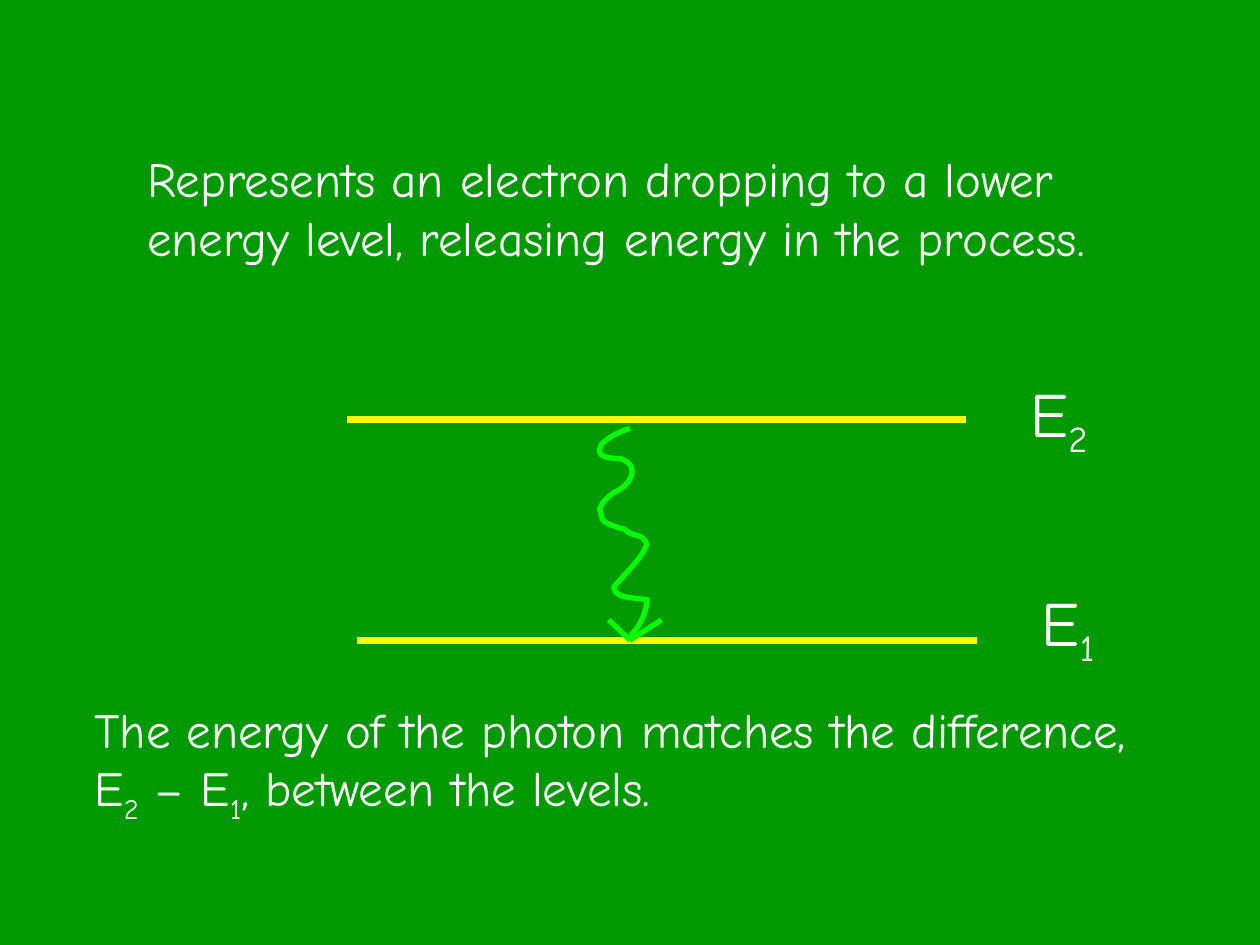
from typing import NamedTuple

from lxml.etree import SubElement
from pptx import Presentation
from pptx.dml.color import RGBColor
from pptx.enum.shapes import MSO_CONNECTOR
from pptx.enum.text import MSO_AUTO_SIZE
from pptx.oxml.ns import qn
from pptx.slide import Slide
from pptx.util import Inches, Pt

FONT = "Comic Neue"
GREEN, WHITE, YELLOW, LIME = "009900", "FFFFFF", "FFFF00", "00FF00"
CURVE_STEPS = 8

Point = tuple[float, float]


class Line(NamedTuple):
    start: Point
    end: Point
    color: str
    width: float


class Text(NamedTuple):
    """Text box; its runs alternate between normal and subscript."""
    left: float
    top: float
    width: float
    height: float
    size: int
    wrap: bool
    runs: tuple[str, ...]


ARROW_TIP = (5, 5.08)
LINES = [
    Line((2.83, 5.08), (7.75, 5.08), YELLOW, 4),
    Line((2.75, 3.33), (7.67, 3.33), YELLOW, 4),
    Line(ARROW_TIP, (4.83, 4.92), LIME, 3),
    Line(ARROW_TIP, (5.25, 4.92), LIME, 3),
]
TEXTS = [
    Text(8.17, 4.58, 0.66, 0.7, 36, False, ("E", "1")),
    Text(8.08, 2.92, 0.72, 0.7, 36, False, ("E", "2")),
    Text(1.07, 1.13, 8.18, 1.5, 28, True,
         ("Represents an electron dropping to a lower energy level, "
          "releasing energy in the process.",)),
    Text(0.65, 5.5, 8.77, 1.03, 28, True,
         ("The energy of the photon matches the difference, E", "2",
          " – E", "1", ", between the levels.")),
]
PHOTON_START = (5, 3.4)
# Each Bézier curve: two control points and an end point.
PHOTON_CURVES = [
    ((4.91, 3.43), (4.84, 3.46), (4.77, 3.53)),
    ((4.77, 3.55), (4.75, 3.57), (4.76, 3.59)),
    ((4.77, 3.64), (4.91, 3.64), (4.93, 3.64)),
    ((5.1, 3.7), (4.99, 3.87), (4.87, 3.91)),
    ((4.82, 3.95), (4.78, 3.98), (4.76, 4.04)),
    ((4.78, 4.11), (4.77, 4.13), (4.83, 4.16)),
    ((4.86, 4.17), (4.89, 4.18), (4.91, 4.19)),
    ((4.93, 4.19), (4.96, 4.2), (4.96, 4.2)),
    ((4.99, 4.24), (5.03, 4.24), (5.09, 4.26)),
    ((5.1, 4.27), (5.14, 4.3), (5.13, 4.33)),
    ((5.11, 4.41), (4.93, 4.59), (4.87, 4.66)),
    ((4.88, 4.68), (4.88, 4.7), (4.9, 4.71)),
    ((4.94, 4.75), (5.11, 4.75), (5.14, 4.76)),
    ((5.12, 4.88), (5.09, 4.95), (5.01, 5.04)),
    ((5.01, 5.06), (5, 5.09), (5, 5.09)),
]


def rgb(color: str) -> RGBColor:
    return RGBColor.from_string(color)


def draw_line(slide: Slide, line: Line) -> None:
    connector = slide.shapes.add_connector(
        MSO_CONNECTOR.STRAIGHT, *map(Inches, line.start + line.end))
    connector.line.color.rgb = rgb(line.color)
    connector.line.width = Pt(line.width)
    SubElement(connector._element.spPr, qn("a:effectLst"))


def bezier_point(points: tuple[Point, ...], t: float) -> Point:
    weights = ((1 - t) ** 3, 3 * t * (1 - t) ** 2, 3 * t ** 2 * (1 - t), t ** 3)
    x, y = (sum(w * value for w, value in zip(weights, axis))
            for axis in zip(*points))
    return x, y


def draw_photon(slide: Slide) -> None:
    vertices = [PHOTON_START]
    for curve in PHOTON_CURVES:
        points = (vertices[-1], *curve)
        vertices += [bezier_point(points, step / CURVE_STEPS)
                     for step in range(1, CURVE_STEPS + 1)]
    start, *rest = [(Inches(x), Inches(y)) for x, y in vertices]
    builder = slide.shapes.build_freeform(*start)
    builder.add_line_segments(rest, close=False)
    wave = builder.convert_to_shape()
    wave.fill.background()
    wave.line.color.rgb = rgb(LIME)
    wave.line.width = Pt(3)
    wave.shadow.inherit = False


def draw_text(slide: Slide, text: Text) -> None:
    box = slide.shapes.add_textbox(
        *map(Inches, (text.left, text.top, text.width, text.height)))
    frame = box.text_frame
    frame.word_wrap = text.wrap
    frame.auto_size = MSO_AUTO_SIZE.SHAPE_TO_FIT_TEXT
    paragraph = frame.paragraphs[0]
    paragraph.font.name = FONT
    paragraph.font.size = Pt(text.size)
    paragraph.font.color.rgb = rgb(WHITE)
    for index, words in enumerate(text.runs):
        run = paragraph.add_run()
        run.text = words
        if index % 2:
            run._r.get_or_add_rPr().set("baseline", "-25000")


def main() -> None:
    presentation = Presentation()
    presentation.slide_width = Inches(10)
    presentation.slide_height = Inches(7.5)
    slide = presentation.slides.add_slide(presentation.slide_layouts[6])
    slide.background.fill.solid()
    slide.background.fill.fore_color.rgb = rgb(GREEN)
    for line in LINES:
        draw_line(slide, line)
    draw_photon(slide)
    for text in TEXTS:
        draw_text(slide, text)
    presentation.save("out.pptx")


if __name__ == "__main__":
    main()
